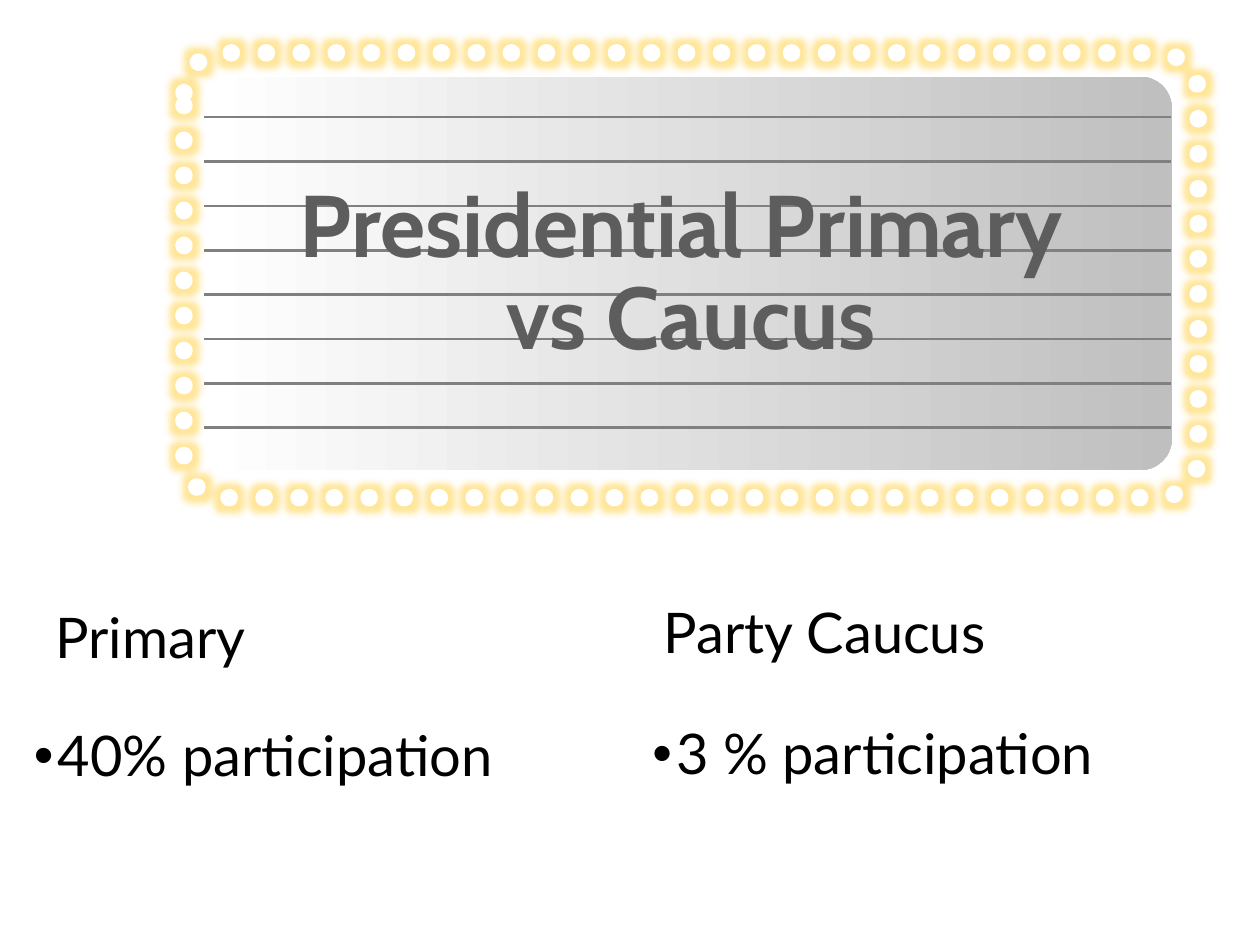
"""Build a marquee slide comparing a presidential primary with a party caucus."""
from lxml import etree
from pptx import Presentation
from pptx import util as u
from pptx.dml.color import RGBColor
from pptx.enum import dml, shapes, text
from pptx.oxml.ns import qn

WHITE = RGBColor(0xFF, 0xFF, 0xFF)
SILVER = RGBColor(0xBF, 0xBF, 0xBF)
GRAY = RGBColor(0x80, 0x80, 0x80)
CHARCOAL = RGBColor(0x5D, 0x5D, 0x5D)
BLACK = RGBColor(0, 0, 0)
GLOW = RGBColor(0xFF, 0xE6, 0x99)
COLUMNS, ROWS = 100, 75


class Marquee:
    def __init__(self, presentation):
        self.column = presentation.slide_width / COLUMNS
        self.row = presentation.slide_height / ROWS
        self.slide = presentation.slides.add_slide(presentation.slide_layouts[5])

    def place(self, left, top, width, height):
        return (round(left * self.column), round(top * self.row),
                round(width * self.column), round(height * self.row))

    def rounded(self, area, corner):
        shape = self.slide.shapes.add_shape(
            shapes.MSO_SHAPE.ROUNDED_RECTANGLE, *self.place(*area))
        shape.adjustments[0] = corner
        shape.shadow.inherit = False
        return shape

    def panel(self, area, corner):
        shape = self.rounded(area, corner)
        shape.fill.gradient()
        shape.fill.gradient_angle = 0
        for stop, color, position in zip(shape.fill.gradient_stops, (WHITE, SILVER), (0, 1)):
            stop.color.rgb = color
            stop.position = position
        shape.line.fill.background()

    def bulbs(self, area, corner):
        shape = self.rounded(area, corner)
        shape.fill.background()
        shape.line.color.rgb = WHITE
        shape.line.width = u.Pt(10)
        shape.line.dash_style = dml.MSO_LINE.ROUND_DOT
        properties = shape._element.spPr
        properties.find(qn("a:ln")).set("cap", "rnd")
        effects = properties.find(qn("a:effectLst"))
        glow = etree.SubElement(effects, qn("a:glow"), rad=str(u.Pt(8)))
        etree.SubElement(glow, qn("a:srgbClr"), val=str(GLOW))

    def rule(self, left, right, top):
        x, y, width, _ = self.place(left, top, right - left, 0)
        line = self.slide.shapes.add_connector(
            shapes.MSO_CONNECTOR.STRAIGHT, x, y, x + width, y)
        line.line.color.rgb = GRAY
        line.line.width = u.Pt(1.5)
        etree.SubElement(line._element.spPr, qn("a:effectLst"))

    def format(self, paragraph, font, size, color, bold=False):
        for run in paragraph.runs:
            run.font.name = font
            run.font.size = u.Pt(size)
            run.font.bold = bold
            run.font.color.rgb = color

    def title(self, area, wording):
        title = self.slide.shapes.title
        title.left, title.top, title.width, title.height = self.place(*area)
        frame = title.text_frame
        frame.text = wording
        frame.auto_size = text.MSO_AUTO_SIZE.NONE
        frame.vertical_anchor = text.MSO_ANCHOR.MIDDLE
        for paragraph in frame.paragraphs:
            paragraph.alignment = text.PP_ALIGN.CENTER
            paragraph.line_spacing = u.Pt(53)
            paragraph.space_before = u.Pt(0)
            self.format(paragraph, "Cabin", 50, CHARCOAL, True)
        self.slide.shapes._spTree.append(title._element)

    def body(self, area, wording, bullet=False):
        frame = self.slide.shapes.add_textbox(*self.place(*area)).text_frame
        frame.word_wrap = True
        frame.text = wording
        paragraph = frame.paragraphs[0]
        paragraph.line_spacing = 0.9
        if bullet:
            properties = paragraph._p.get_or_add_pPr()
            indent = u.Inches(0.19)
            properties.set("marL", str(indent))
            properties.set("indent", str(-indent))
            etree.SubElement(properties, qn("a:buFont"), typeface="Arial")
            etree.SubElement(properties, qn("a:buChar"), char="•")
        self.format(paragraph, "Lato", 32, BLACK)


def main():
    presentation = Presentation()
    presentation.slide_width, presentation.slide_height = u.Inches(10), u.Inches(7.5)
    marquee = Marquee(presentation)
    marquee.body((3.4, 47.9, 47.4, 9), "Primary")
    marquee.body((51.7, 47.5, 42.5, 9), "Party Caucus")
    marquee.body((1.7, 57.3, 42.5, 17.7), "40% participation", bullet=True)
    marquee.body((50.8, 57.1, 49.2, 17.9), "3 % participation", bullet=True)
    marquee.panel((16.3, 6.1, 76.7, 31.2), 0.08)
    for index in range(8):
        marquee.rule(16.2, 92.9, 9.3 + 3.52 * index)
    marquee.bulbs((14.6, 4.2, 80.5, 35.3), 0.09)
    marquee.title((16.5, 6.2, 76.7, 31.2), "Presidential Primary \nvs Caucus")
    presentation.save("out.pptx")


if __name__ == "__main__":
    main()
